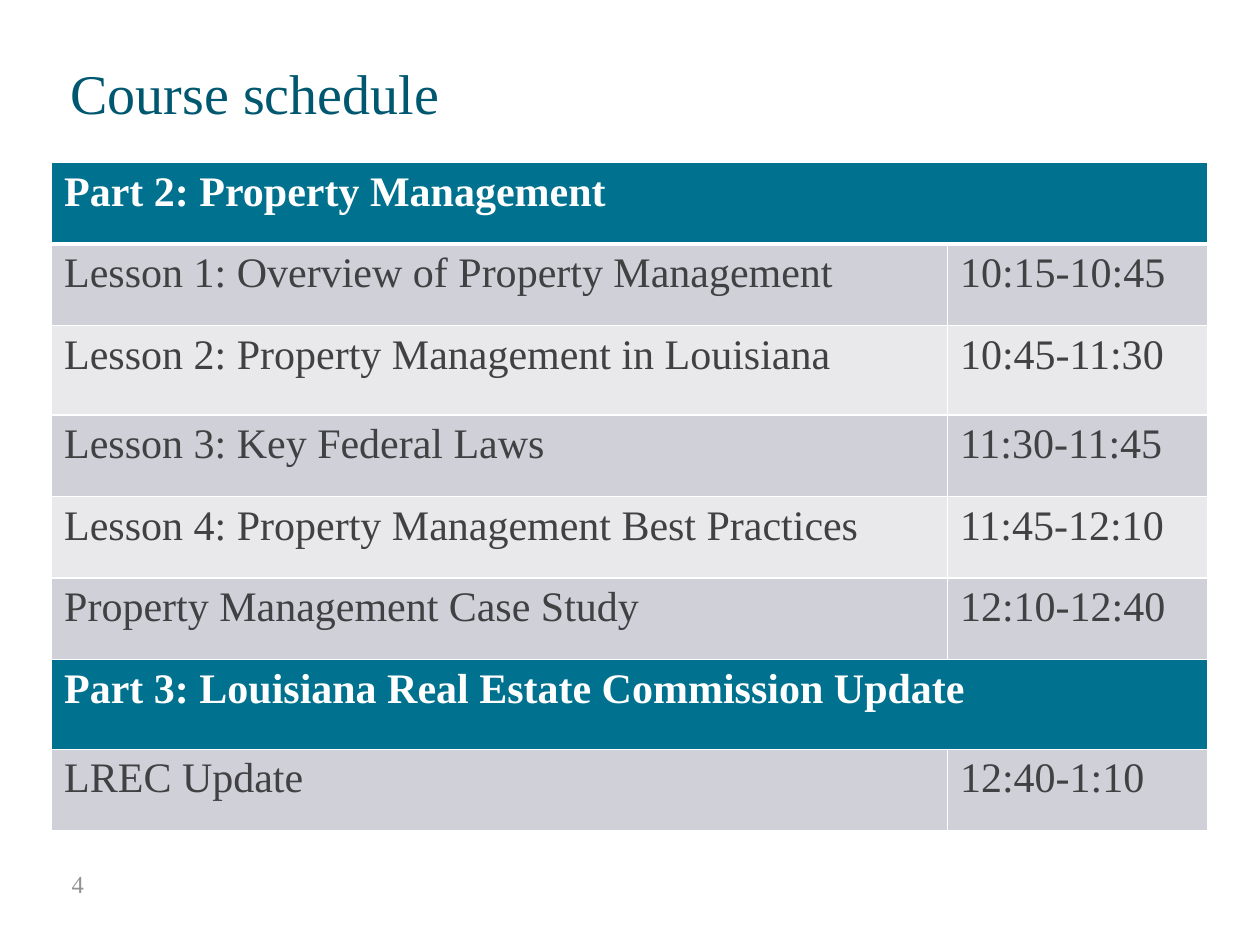
from lxml.etree import SubElement
from pptx import Presentation
from pptx.dml.color import RGBColor
from pptx.enum.text import MSO_ANCHOR as Anchor, PP_ALIGN as Align
from pptx.oxml.ns import qn
from pptx.util import Pt

HEADING = "Course schedule"
PAGE_NUMBER = "4"
SCHEDULE = [
    ("Part 2: Property Management", None),
    ("Lesson 1: Overview of Property Management", "10:15-10:45"),
    ("Lesson 2: Property Management in Louisiana", "10:45-11:30"),
    ("Lesson 3: Key Federal Laws", "11:30-11:45"),
    ("Lesson 4: Property Management Best Practices", "11:45-12:10"),
    ("Property Management Case Study", "12:10-12:40"),
    ("Part 3: Louisiana Real Estate Commission Update", None),
    ("LREC Update", "12:40-1:10"),
]
COLORS = {
    "heading": "005870", "part": "00718E", "white": "FFFFFF", "lesson": "414042",
    "odd": "CFD0D8", "even": "E9E9EC", "page": "939393",
}
FONT = "Times New Roman"
COLUMN_WIDTHS = (511.9, 149)
ROW_HEIGHT, TALL_HEIGHT = 46.6, 51.2
TALL_ROWS = (2, 6)


def write(frame, text, size=24, color="lesson", bold=False, spacing=1):
    paragraph = frame.paragraphs[0]
    paragraph.alignment = Align.LEFT
    paragraph.line_spacing = spacing
    paragraph.space_before = Pt(0)
    run = paragraph.add_run()
    run.text = text
    run.font.name = FONT
    run.font.size = Pt(size)
    run.font.bold = bold
    run.font.color.rgb = RGBColor.from_string(COLORS[color])


def style_cell(cell, fill, top, bottom):
    properties = cell._tc.get_or_add_tcPr()
    for side, width in (("L", 1), ("R", 1), ("T", top), ("B", bottom)):
        border = SubElement(properties, qn(f"a:ln{side}"), w=str(Pt(width)))
        solid = SubElement(border, qn("a:solidFill"))
        SubElement(solid, qn("a:srgbClr"), val=COLORS["white"])
    cell.fill.solid()
    cell.fill.fore_color.rgb = RGBColor.from_string(COLORS[fill])


def add_schedule(slide):
    heights = [TALL_HEIGHT if i in TALL_ROWS else ROW_HEIGHT for i in range(len(SCHEDULE))]
    schedule = slide.shapes.add_table(
        len(SCHEDULE), 2, Pt(29.5), Pt(92.9), Pt(sum(COLUMN_WIDTHS)), Pt(sum(heights))
    ).table
    for column, width in zip(schedule.columns, COLUMN_WIDTHS):
        column.width = Pt(width)
    for i, (session, time) in enumerate(SCHEDULE):
        schedule.rows[i].height = Pt(heights[i])
        is_part = time is None
        fill = "part" if is_part else "odd" if i % 2 else "even"
        for j in range(2):
            style_cell(schedule.cell(i, j), fill, 3 if i == 1 else 1, 3 if i == 0 else 1)
        session_cell, time_cell = schedule.cell(i, 0), schedule.cell(i, 1)
        write(session_cell.text_frame, session,
              color="white" if is_part else "lesson", bold=is_part)
        if is_part:
            session_cell.merge(time_cell)
        else:
            write(time_cell.text_frame, time)


def main():
    deck = Presentation()
    deck.slide_width, deck.slide_height = Pt(720), Pt(540)
    slide = deck.slides.add_slide(deck.slide_layouts[5])
    add_schedule(slide)

    heading = slide.shapes.title
    heading.left, heading.top, heading.width, heading.height = map(Pt, (40.3, 30.2, 418.3, 44.6))
    frame = heading.text_frame
    frame.margin_left = frame.margin_right = frame.margin_bottom = 0
    frame.margin_top = Pt(7.5)
    frame.vertical_anchor = Anchor.TOP
    write(frame, HEADING, size=32, color="heading", spacing=0.9)

    page = slide.shapes.add_textbox(Pt(33.8), Pt(490.3), Pt(162), Pt(28.8)).text_frame
    page.word_wrap = True
    page.vertical_anchor = Anchor.MIDDLE
    write(page, PAGE_NUMBER, size=14, color="page")
    deck.save("out.pptx")


if __name__ == "__main__":
    main()
